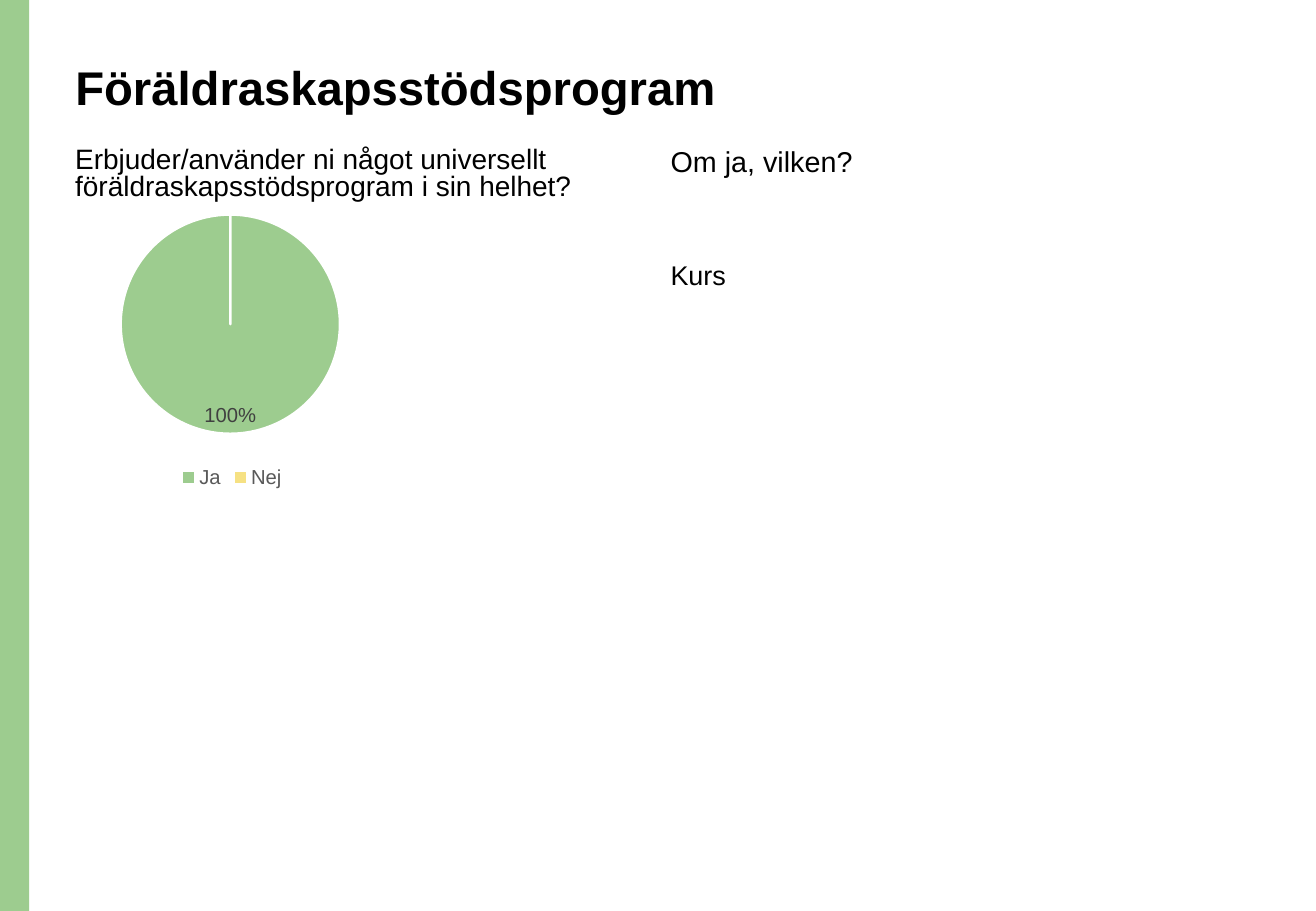
from pptx import Presentation
from pptx.chart.data import CategoryChartData
from pptx.dml.color import RGBColor
from pptx.enum.chart import XL_CHART_TYPE, XL_LABEL_POSITION, XL_LEGEND_POSITION
from pptx.enum.shapes import MSO_SHAPE
from pptx.enum.text import MSO_ANCHOR, PP_ALIGN
from pptx.oxml import parse_xml
from pptx.oxml.ns import nsdecls, qn
from pptx.util import Inches, Pt

PIE = XL_CHART_TYPE.PIE
INSIDE_END = XL_LABEL_POSITION.INSIDE_END
BOTTOM = XL_LEGEND_POSITION.BOTTOM
RECTANGLE = MSO_SHAPE.RECTANGLE
TOP = MSO_ANCHOR.TOP
LEFT = PP_ALIGN.LEFT

FONT = "Arial"
GREEN, YELLOW, BLACK, WHITE = "9DCC8F", "F6E183", "000000", "FFFFFF"
LEFT_COLUMN, RIGHT_COLUMN = 0.52, 5.42
HEADING_TOP, TEXT_HEIGHT = 1.17, 0.57


def rgb(colour):
    return RGBColor.from_string(colour)


def style_font(font, size, colour=BLACK, bold=False):
    font.name = FONT
    font.size = Pt(size)
    font.bold = bold
    font.color.rgb = rgb(colour)


def fill_text(frame, text, size, spacing, bold=False):
    frame.word_wrap = True
    frame.vertical_anchor = TOP
    frame.text = text
    paragraph = frame.paragraphs[0]
    paragraph.alignment = LEFT
    paragraph.line_spacing = spacing
    style_font(paragraph.runs[0].font, size, bold=bold)


def add_side_band(slide, height):
    band = slide.shapes.add_shape(RECTANGLE, 0, 0, Inches(0.24), height)
    band.shadow.inherit = False
    band.fill.solid()
    band.fill.fore_color.rgb = rgb(GREEN)
    band.line.fill.background()


def set_title(slide, text):
    title = slide.shapes.title
    title.left, title.top = Inches(LEFT_COLUMN), Inches(0.48)
    title.width, title.height = Inches(9.34), Inches(1.02)
    fill_text(title.text_frame, text, 28, 0.9, bold=True)


def add_text(slide, left, top, width, text, size, spacing=0.9):
    box = slide.shapes.add_textbox(
        Inches(left), Inches(top), Inches(width), Inches(TEXT_HEIGHT))
    fill_text(box.text_frame, text, size, spacing)


def place_pie(chart, x, y, width, height):
    plot_area = chart.plots[0]._element.getparent()
    for layout in plot_area.findall(qn("c:layout")):
        plot_area.remove(layout)
    plot_area.insert(0, parse_xml(
        f'<c:layout {nsdecls("c")}><c:manualLayout>'
        '<c:layoutTarget val="inner"/>'
        '<c:xMode val="edge"/><c:yMode val="edge"/>'
        f'<c:x val="{x}"/><c:y val="{y}"/>'
        f'<c:w val="{width}"/><c:h val="{height}"/>'
        '</c:manualLayout></c:layout>'))


def hide_label(labels, index):
    labels._element.insert(0, parse_xml(
        f'<c:dLbl {nsdecls("c")}><c:idx val="{index}"/>'
        '<c:delete val="1"/></c:dLbl>'))


def add_answer_pie(slide):
    answers = CategoryChartData(number_format="0%")
    answers.categories = ["Ja", "Nej"]
    answers.add_series("Series 1", [1, 0])
    chart = slide.shapes.add_chart(
        PIE, Inches(LEFT_COLUMN), Inches(1.62), Inches(2.78), Inches(2.44),
        answers).chart
    style_font(chart.font, 10)
    chart.has_title = False
    chart.has_legend = True
    chart.legend.position = BOTTOM
    chart.legend.include_in_layout = False
    style_font(chart.legend.font, 12, "595959")
    chart.plots[0].vary_by_categories = True
    place_pie(chart, 0.17, 0.06, 0.65, 0.74)

    series = chart.plots[0].series[0]
    for index, colour in enumerate([GREEN, YELLOW]):
        form = series.points[index].format
        form.fill.solid()
        form.fill.fore_color.rgb = rgb(colour)
        form.line.color.rgb = rgb(WHITE)
        form.line.width = Pt(1.5)

    labels = series.data_labels
    labels.show_value = True
    labels.number_format = "0%"
    labels.number_format_is_linked = False
    labels.position = INSIDE_END
    style_font(labels.font, 12, "404040")
    hide_label(labels, 1)


def main():
    presentation = Presentation()
    presentation.slide_width = Inches(10.83)
    presentation.slide_height = Inches(7.5)
    slide = presentation.slides.add_slide(presentation.slide_layouts[5])

    add_side_band(slide, presentation.slide_height)
    set_title(slide, "Föräldraskapsstödsprogram")
    add_text(slide, LEFT_COLUMN, HEADING_TOP, 5.48,
             "Erbjuder/använder ni något universellt "
             "föräldraskapsstödsprogram i sin helhet?", 16.6, 0.8)
    add_answer_pie(slide)
    add_text(slide, RIGHT_COLUMN, HEADING_TOP, 3.95, "Om ja, vilken?", 17)
    add_text(slide, RIGHT_COLUMN, 2.11, 3.95, "Kurs", 16)

    presentation.save("out.pptx")


if __name__ == "__main__":
    main()
